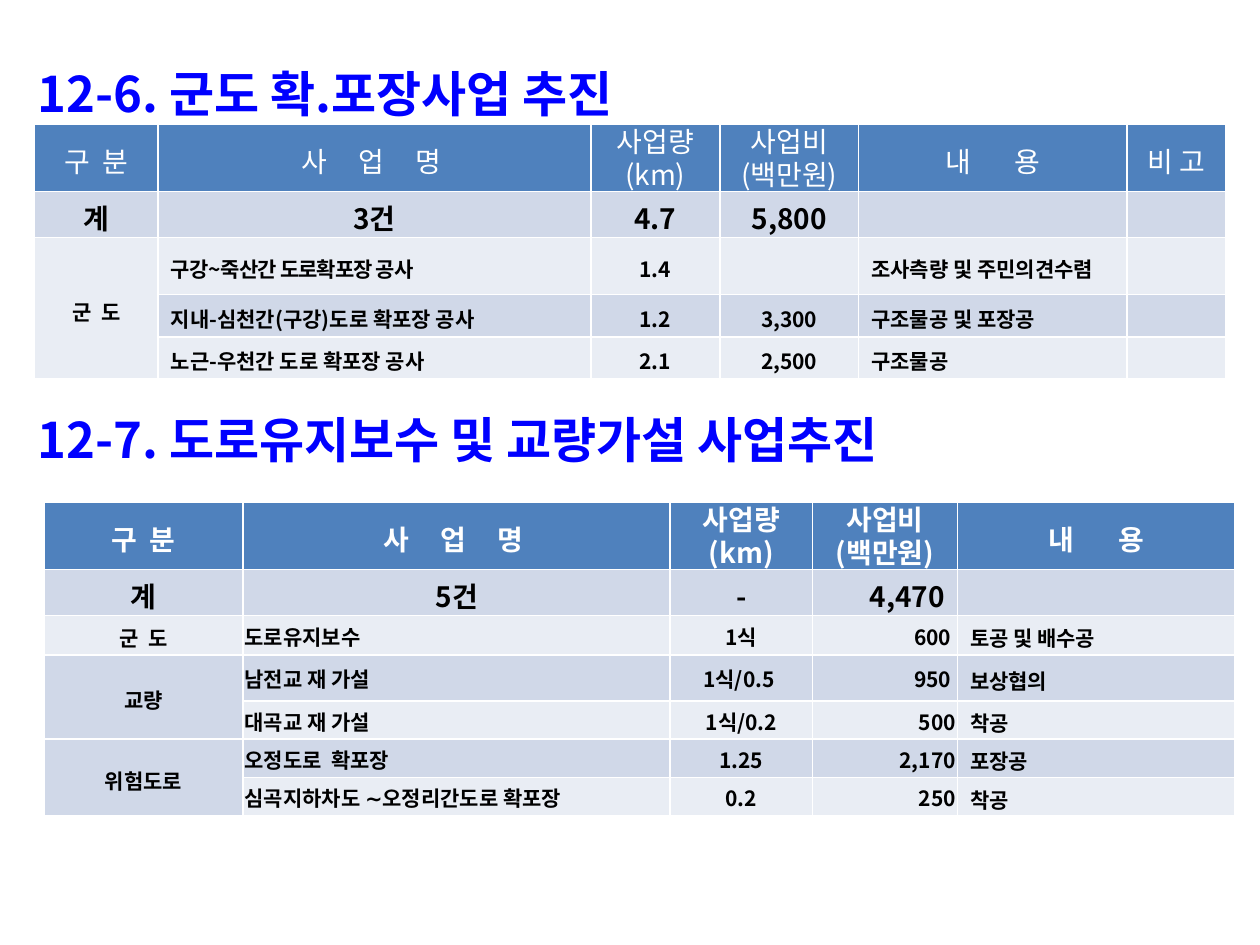
from pptx import Presentation
from pptx.dml.color import RGBColor
from pptx.enum.text import MSO_ANCHOR, MSO_AUTO_SIZE, PP_ALIGN
from pptx.oxml.ns import qn
from pptx.util import Cm, Pt
from lxml.etree import SubElement

FONT = "Noto Sans CJK KR"
COLORS = {
    "heading": "0000FF",
    "header": "4F81BD",
    "header_text": "FFFFFF",
    "text": "000000",
    "band_dark": "D0D8E8",
    "band_light": "E9EDF4",
}
ALIGN = {"l": PP_ALIGN.LEFT, "c": PP_ALIGN.CENTER, "r": PP_ALIGN.RIGHT}

WIDENING_ROWS = [
    ["구  분", "사     업     명 ", "사업량\n(km)", "사업비\n(백만원)", "내       용", "비 고"],
    ["계", "3건", "4.7", "5,800", "", ""],
    ["군  도", "구강~죽산간 도로확포장 공사", "1.4", "", "조사측량 및 주민의견수렴", ""],
    ["", "지내-심천간(구강)도로 확포장 공사", "1.2", "3,300", "구조물공 및 포장공", ""],
    ["", "노근-우천간 도로 확포장 공사", "2.1", "2,500", "구조물공", ""],
]
REPAIR_ROWS = [
    ["구  분", "사     업     명 ", "사업량\n(km)", "사업비\n(백만원)", "내       용"],
    ["계", "5건", "-", "4,470", ""],
    ["군  도", "도로유지보수", " 1식 ", "600 ", "토공 및 배수공"],
    ["교량", "남전교 재 가설", "1식/0.5 ", "950 ", "보상협의"],
    ["", "대곡교 재 가설", "1식/0.2", "500", "착공"],
    ["위험도로", "오정도로  확포장", "1.25", "2,170", "포장공"],
    ["", "심곡지하차도 ∼오정리간도로 확포장", "0.2", "250", "착공"],
]


def style_run(run, size, color, bold):
    run.font.size = Pt(size)
    run.font.bold = bold
    run.font.name = FONT
    run.font.color.rgb = RGBColor.from_string(COLORS[color])
    SubElement(run._r.get_or_add_rPr(), qn("a:ea")).set("typeface", FONT)


def format_heading(heading, words, left, top, width, height, line_spacing):
    heading.left, heading.top, heading.width, heading.height = left, top, width, height
    frame = heading.text_frame
    frame.text = words
    frame.word_wrap = True
    frame.auto_size = MSO_AUTO_SIZE.NONE
    frame.vertical_anchor = MSO_ANCHOR.TOP
    paragraph = frame.paragraphs[0]
    paragraph.alignment = PP_ALIGN.LEFT
    paragraph.line_spacing = line_spacing
    style_run(paragraph.runs[0], 28, "heading", True)


def format_cell(cell, words, row, align, bold, compact):
    size = 16 if row < 2 else 12
    fill = "header" if row == 0 else "band_dark" if row % 2 else "band_light"
    cell.fill.solid()
    cell.fill.fore_color.rgb = RGBColor.from_string(COLORS[fill])
    cell.vertical_anchor = MSO_ANCHOR.MIDDLE
    # Narrow margins keep the tall font inside the low rows
    cell.margin_top = Cm(0.1)
    cell.margin_bottom = 0
    if compact:
        cell.margin_left = cell.margin_right = Cm(0.03)
        cell.margin_top = Cm(0.03)
    cell.text_frame.text = words
    for paragraph in cell.text_frame.paragraphs:
        paragraph.alignment = ALIGN[align]
        if "\n" in words:
            paragraph.line_spacing = 0.7
            paragraph.space_before = Pt(size * 0.2)
        for run in paragraph.runs:
            style_run(run, size, "text" if row else "header_text", bold)
        if not paragraph.runs:
            # An empty cell must not stretch its row
            paragraph._p.get_or_add_endParaRPr().set("sz", str(size * 100))


def add_project_table(slide, left, top, widths, heights, rows, total_align,
                      body_align, header_bold, merges, compact_columns=()):
    table = slide.shapes.add_table(len(rows), len(widths), left, top,
                                   Cm(sum(widths)), Cm(sum(heights))).table
    for column, width in zip(table.columns, widths):
        column.width = Cm(width)
    for table_row, height in zip(table.rows, heights):
        table_row.height = Cm(height)
    for r, row in enumerate(rows):
        aligns = ("c" * len(row), total_align)[r] if r < 2 else body_align
        for c, words in enumerate(row):
            format_cell(table.cell(r, c), words, r, aligns[c],
                        r > 0 or header_bold, r > 1 and c in compact_columns)
    for first, last in merges:
        table.cell(first, 0).merge(table.cell(last, 0))
    return table


def add_widening_section(slide, left, top):
    format_heading(slide.shapes.title, "12-6. 군도 확.포장사업 추진",
                   left, top, Cm(24.79), Cm(1.55), 1.2)
    table = add_project_table(
        slide, left + Cm(0.19), top + Cm(1.6),
        [2.49, 8.72, 2.6, 2.8, 5.41, 2], [1.32, 0.93, 1.15, 0.85, 0.85],
        WIDENING_ROWS, "cccccc", "clcclc", False, [(2, 4)])
    # Slightly tightened letters in the first project name
    project = table.cell(2, 1).text_frame.paragraphs[0].runs[0]
    project._r.get_or_add_rPr().set("spc", "-50")


def add_repair_section(slide, left, top):
    heading = slide.shapes.add_textbox(left, top, Cm(24.79), Cm(1.7))
    format_heading(heading, "12-7. 도로유지보수 및 교량가설 사업추진",
                   left, top, Cm(24.79), Cm(1.7), 1.0)
    add_project_table(
        slide, left + Cm(0.38), top + Cm(2),
        [4.01, 8.61, 2.87, 2.92, 5.59], [1.32, 0.93, 0.79, 0.93, 0.77, 0.77, 0.77],
        REPAIR_ROWS, "cccrc", "clcrl", True, [(3, 4), (5, 6)], (1, 2, 3))


def main():
    presentation = Presentation()
    presentation.slide_width, presentation.slide_height = Cm(25.4), Cm(19.05)
    slide = presentation.slides.add_slide(presentation.slide_layouts[5])
    add_widening_section(slide, Cm(0.51), Cm(0.91))
    add_repair_section(slide, Cm(0.51), Cm(8.13))
    presentation.save("out.pptx")


if __name__ == "__main__":
    main()
